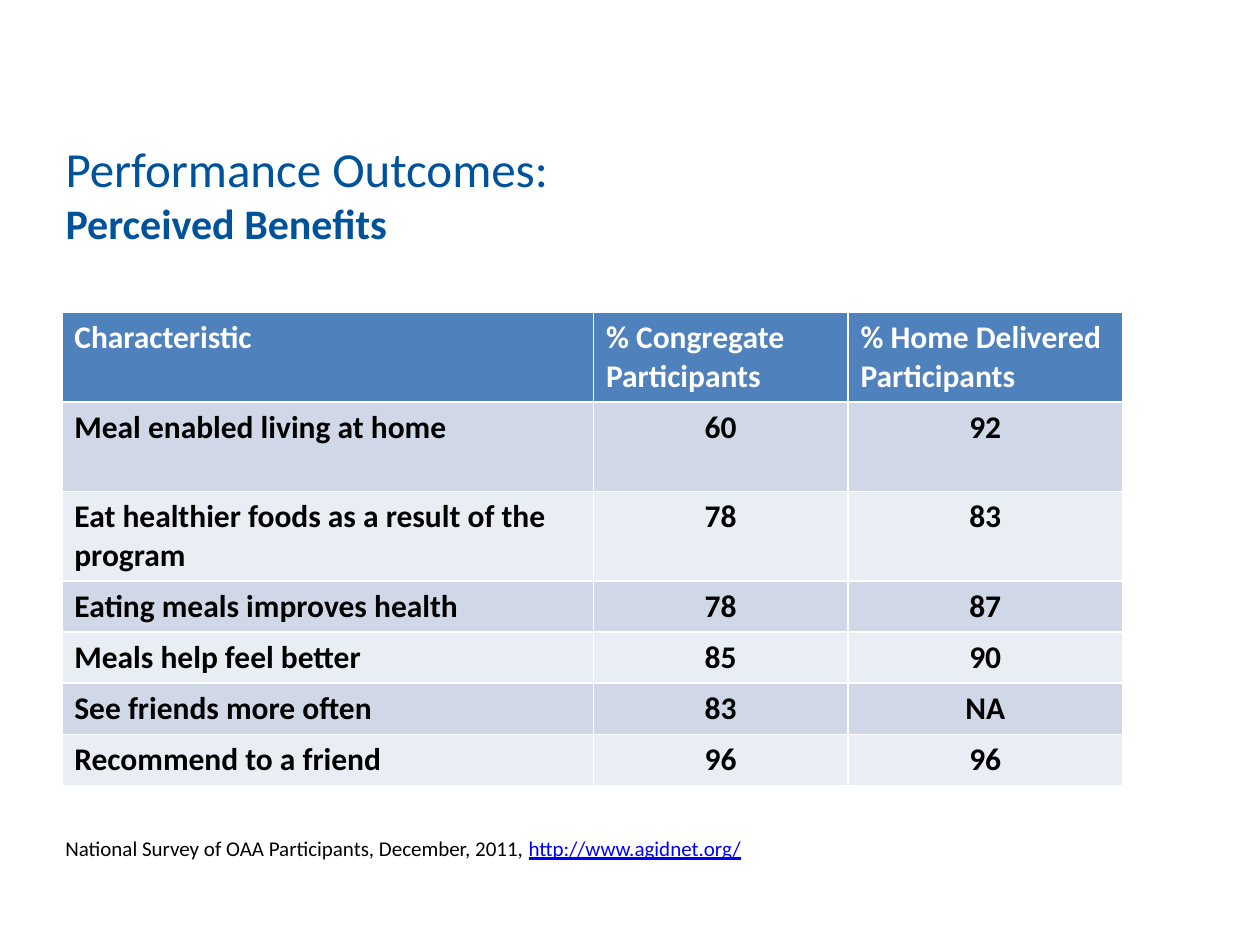
import pptx
import pptx.util
import pptx.dml.color
import pptx.enum.text

Inches, Pt = pptx.util.Inches, pptx.util.Pt
RGB = pptx.dml.color.RGBColor.from_string
ALIGN = pptx.enum.text.PP_ALIGN
ANCHOR = pptx.enum.text.MSO_ANCHOR
AUTO = pptx.enum.text.MSO_AUTO_SIZE

THEME = {
    "font": "Calibri",
    "title": {"size": Pt(28), "color": "00529B", "bold": False},
    "subtitle": {"size": Pt(24), "color": "00529B", "bold": True},
    "header": {"size": Pt(18), "color": "FFFFFF", "bold": True},
    "body": {"size": Pt(18), "color": "000000", "bold": True},
    "note": {"size": Pt(12), "color": "000000"},
    "link": {"size": Pt(12), "color": "0000FF", "underline": True},
    "header_fill": "4F81BD",
    "band_fills": ["E9EDF4", "D0D8E8"],
}


def add_run(p, text, style):
    r = p.add_run()
    r.text = text
    r.font.name = THEME["font"]
    for name, value in THEME[style].items():
        if name == "color":
            r.font.color.rgb = RGB(value)
        else:
            setattr(r.font, name, value)


prs = pptx.Presentation()
prs.slide_width, prs.slide_height = Inches(10), Inches(7.5)
s = prs.slides.add_slide(prs.slide_layouts[5])

# Title
title = s.shapes.title
title.left, title.top = Inches(0.42), Inches(0.91)
title.width, title.height = Inches(8.24), Inches(1.25)
tf = title.text_frame
for name, value in {"word_wrap": True, "auto_size": AUTO.NONE,
                    "vertical_anchor": ANCHOR.MIDDLE}.items():
    setattr(tf, name, value)
p = tf.paragraphs[0]
p.alignment = ALIGN.LEFT
add_run(p, "Performance Outcomes:", "title")
p.add_line_break()
add_run(p, "Perceived Benefits", "subtitle")

# Outcomes table; the default table style supplies the white rules
rows = [
    ("Characteristic", "% Congregate Participants", "% Home Delivered Participants"),
    ("Meal enabled living at home", "60", "92"),
    ("Eat healthier foods as a result of the program", "78", "83"),
    ("Eating meals improves health", "78", "87"),
    ("Meals help feel better", "85", "90"),
    ("See friends more often", "83", "NA"),
    ("Recommend to a friend", "96", "96"),
]
col_widths = [4.22, 2.02, 2.18]
row_heights = [0.7, 0.71, 0.71] + [0.4] * 4
table = s.shapes.add_table(len(rows), len(col_widths), Inches(0.49), Inches(2.48),
                           Inches(sum(col_widths)), Inches(sum(row_heights))).table
for col, width in zip(table.columns, col_widths):
    col.width = Inches(width)
for i, (texts, height) in enumerate(zip(rows, row_heights)):
    table.rows[i].height = Inches(height)
    for j, text in enumerate(texts):
        cell = table.cell(i, j)
        cell.fill.solid()
        cell.fill.fore_color.rgb = RGB(THEME["band_fills"][i % 2] if i else THEME["header_fill"])
        p = cell.text_frame.paragraphs[0]
        p.alignment = ALIGN.CENTER if i and j else ALIGN.LEFT
        add_run(p, text, "body" if i else "header")

# Survey reference
note = s.shapes.add_textbox(Inches(0.42), Inches(6.58), Inches(7.72), Inches(0.71))
tf = note.text_frame
tf.word_wrap = True
p = tf.paragraphs[0]
add_run(p, "National Survey of OAA Participants, December, 2011, ", "note")
add_run(p, "http://www.agidnet.org/", "link")

prs.save("out.pptx")
